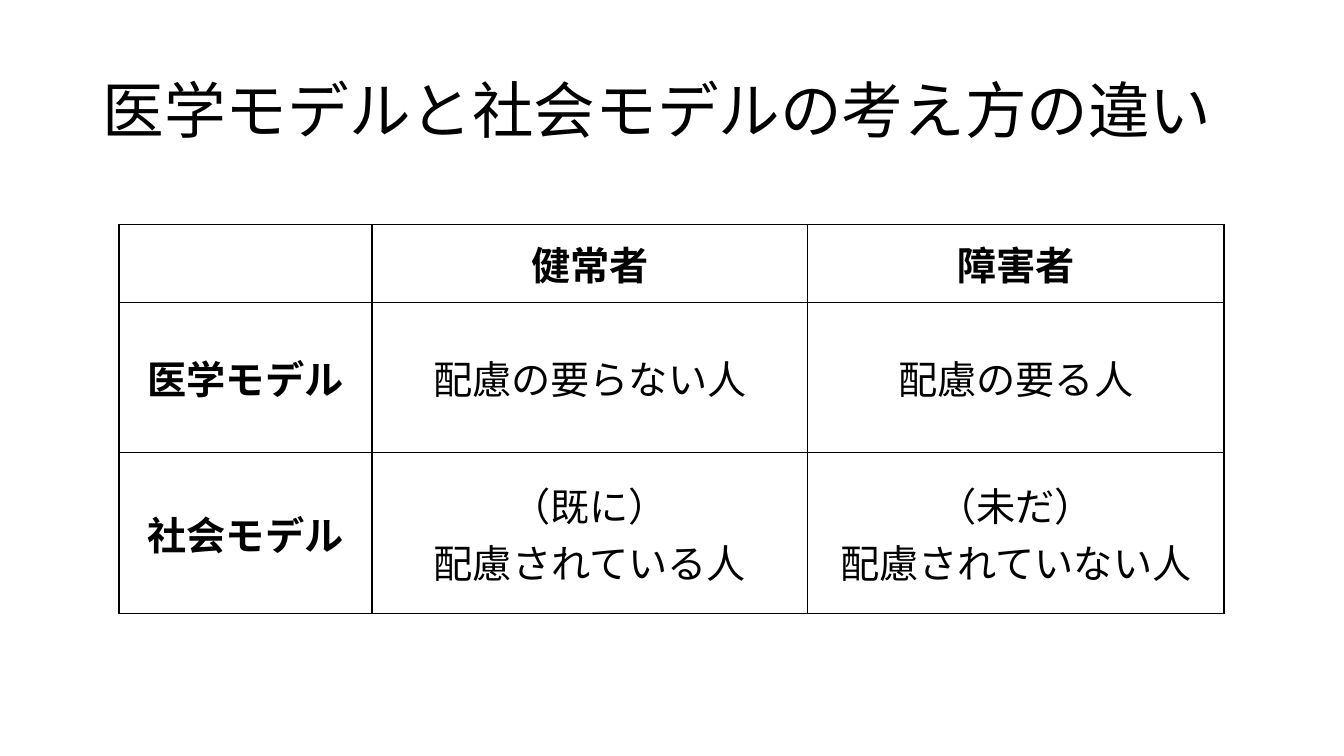
"""Build a slide comparing the medical and social models of disability."""
from dataclasses import dataclass

from lxml import etree
from pptx import Presentation
from pptx.dml.color import RGBColor
from pptx.enum import text
from pptx.oxml.ns import qn
from pptx.util import Inches, Pt


@dataclass(frozen=True)
class Theme:
    font: str = "Noto Sans CJK JP"
    ink: str = "000000"
    title_size: int = 44
    table_size: int = 28
    border_width: int = 1


theme = Theme()


def format_runs(paragraph, size, bold=False):
    for run in paragraph.runs:
        run.font.name = theme.font
        run.font.size = Pt(size)
        run.font.bold = bold
        run.font.color.rgb = RGBColor.from_string(theme.ink)
        east_asian = etree.Element(qn("a:ea"), typeface=theme.font)
        run.font._element.find(qn("a:latin")).addnext(east_asian)


def add_borders(cell):
    properties = cell._tc.get_or_add_tcPr()
    for index, side in enumerate(("a:lnL", "a:lnR", "a:lnT", "a:lnB")):
        line = etree.Element(qn(side), w=str(Pt(theme.border_width)))
        fill = etree.SubElement(line, qn("a:solidFill"))
        etree.SubElement(fill, qn("a:srgbClr"), val=theme.ink)
        properties.insert(index, line)


presentation = Presentation()
presentation.slide_width = Inches(13.33)
presentation.slide_height = Inches(7.5)
slide = presentation.slides.add_slide(presentation.slide_layouts[6])

title = slide.shapes.add_textbox(Inches(0.92), Inches(0.4), Inches(11.5), Inches(1.45))
title.text_frame.word_wrap = True
title.text_frame.vertical_anchor = text.MSO_ANCHOR.MIDDLE
title.text_frame.text = "医学モデルと社会モデルの考え方の違い"
title.text_frame.paragraphs[0].line_spacing = 0.9
format_runs(title.text_frame.paragraphs[0], theme.title_size)

rows = [
    ("", "健常者", "障害者"),
    ("医学モデル", "配慮の要らない人", "配慮の要る人"),
    ("社会モデル", "（既に）\n配慮されている人", "（未だ）\n配慮されていない人"),
]
column_widths = (2.51, 4.32, 4.13)
row_heights = (0.77, 1.49, 1.6)

table = slide.shapes.add_table(
    len(rows), len(column_widths), Inches(1.18), Inches(2.23),
    Inches(sum(column_widths)), Inches(sum(row_heights)),
).table
table.horz_banding = False
for column, width in zip(table.columns, column_widths):
    column.width = Inches(width)
for row, height in zip(table.rows, row_heights):
    row.height = Inches(height)

for row_index, row in enumerate(rows):
    for column_index, content in enumerate(row):
        cell = table.cell(row_index, column_index)
        cell.fill.background()
        cell.vertical_anchor = text.MSO_ANCHOR.MIDDLE
        cell.text_frame.text = content
        is_header = row_index == 0 or column_index == 0
        for paragraph in cell.text_frame.paragraphs:
            paragraph.alignment = text.PP_ALIGN.CENTER
            format_runs(paragraph, theme.table_size, is_header)
        add_borders(cell)

presentation.save("out.pptx")
